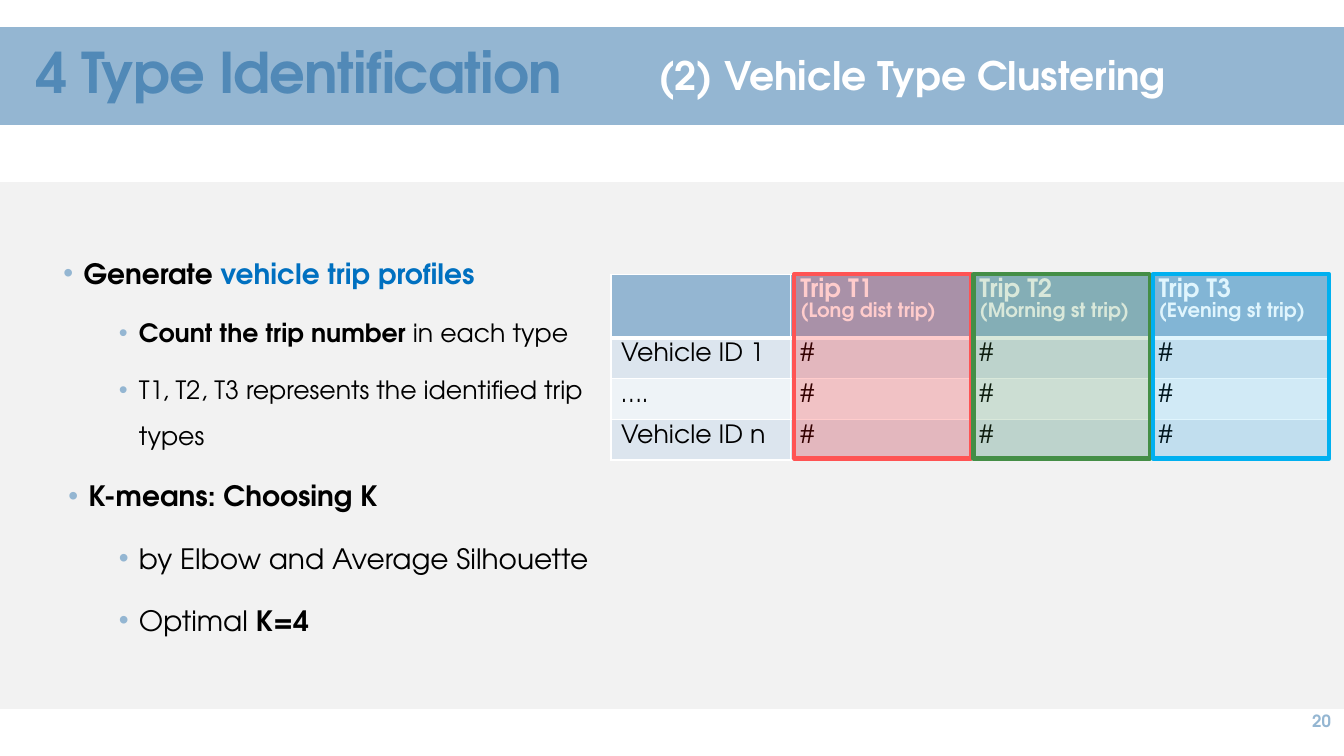
from lxml.etree import SubElement
from pptx import Presentation
from pptx.dml.color import RGBColor
from pptx.enum.shapes import MSO_SHAPE as Shape
from pptx.enum.text import MSO_ANCHOR as Anchor, PP_ALIGN as Align
from pptx.oxml import parse_xml
from pptx.oxml.ns import nsdecls, qn
from pptx.util import Inches, Pt

FONT = "TeX Gyre Adventor"
WHITE = RGBColor(0xFF, 0xFF, 0xFF)
BLACK = RGBColor(0, 0, 0)
SKY = RGBColor(0x94, 0xB6, 0xD2)
STEEL = RGBColor(0x51, 0x89, 0xB7)
BLUE = RGBColor(0x00, 0x70, 0xC0)
PANEL = RGBColor(0xF2, 0xF2, 0xF2)
BAND_DARK = RGBColor(0xDC, 0xE5, 0xEE)
BAND_LIGHT = RGBColor(0xEE, 0xF3, 0xF7)
RED = RGBColor(0xFF, 0x00, 0x00)
CORAL = RGBColor(0xFF, 0x53, 0x53)
GREEN = RGBColor(0x44, 0x8E, 0x46)
CYAN = RGBColor(0x00, 0xB0, 0xF0)

PROFILE_POINTS = [
    (0, 0.2, 12, [("Generate ", 20, True, BLACK), ("vehicle trip profiles", 20, True, BLUE)]),
    (1, 0.75, 2.5, [("Count the trip number ", 18, True, BLACK), ("in each type", 18, False, BLACK)]),
    (1, 0.75, 2.5, [("T1, T2, T3 represents the identified trip types", 18, False, BLACK)]),
    (0, 0.25, 2.5, [("K-means: Choosing K", 20, True, BLACK)]),
    (1, 0.75, 2.5, [("by Elbow and Average Silhouette", 20, False, BLACK)]),
    (1, 0.75, 2.5, [("Optimal ", 20, False, BLACK), ("K=4", 20, True, BLACK)]),
]
TRIP_TYPES = [
    ("Trip T1", "(Long dist trip)", RED, 20, CORAL),
    ("Trip T2", "(Morning st trip)", GREEN, 20, GREEN),
    ("Trip T3", "(Evening st trip)", CYAN, 12, CYAN),
]
VEHICLES = ["Vehicle ID 1", "….", "Vehicle ID n"]


def set_format(target, formats):
    for name, value in formats.items():
        setattr(target, name, value)


def add_span(para, text, size, bold, color):
    span = para.add_run()
    span.text = text
    set_format(span.font, {"name": FONT, "size": Pt(size), "bold": bold})
    span.font.color.rgb = color
    return span


def add_text_box(page, box, wrap=True, anchor=Anchor.TOP):
    frame = page.shapes.add_textbox(*map(Inches, box)).text_frame
    set_format(frame, {"word_wrap": wrap, "vertical_anchor": anchor})
    return frame


def add_rectangle(page, box, fill, line=None, width=0, alpha=None):
    rectangle = page.shapes.add_shape(Shape.RECTANGLE, *map(Inches, box))
    rectangle.shadow.inherit = False
    rectangle.fill.solid()
    rectangle.fill.fore_color.rgb = fill
    if line is None:
        rectangle.line.fill.background()
    else:
        rectangle.line.color.rgb = line
        rectangle.line.width = Pt(width)
    if alpha is not None:
        color = rectangle.fill._xPr.find(qn("a:solidFill"))[0]
        SubElement(color, qn("a:alpha"), val=str(alpha * 1000))


def add_title_band(page, box):
    left, top, width, height = box
    add_rectangle(page, box, SKY)
    title = add_text_box(page, (left + 0.26, top - 0.15, 7.42, 1.26), anchor=Anchor.MIDDLE)
    title.paragraphs[0].line_spacing = 0.9
    span = add_span(title.paragraphs[0], "4 Type Identification", 40, True, STEEL)
    span._r.get_or_add_rPr().set("spc", "-60")
    subtitle = add_text_box(page, (left + 6.43, top + 0.19, 5.46, 0.57), wrap=False)
    add_span(subtitle.paragraphs[0], "(2) Vehicle Type Clustering", 28, True, WHITE)


def add_bullet(para, indent):
    props = para._p.get_or_add_pPr()
    props.set("marL", str(Inches(indent)))
    props.set("indent", str(Inches(-0.2)))
    color = SubElement(props, qn("a:buClr"))
    SubElement(color, qn("a:srgbClr"), val=str(SKY))
    SubElement(props, qn("a:buFont"), typeface="Arial")
    SubElement(props, qn("a:buChar"), char="•")


def add_points(page, box):
    frame = add_text_box(page, box)
    for index, (level, indent, before, spans) in enumerate(PROFILE_POINTS):
        para = frame.add_paragraph() if index else frame.paragraphs[0]
        set_format(para, {"level": level, "line_spacing": 1.5,
                          "space_before": Pt(before), "space_after": Pt(6)})
        add_bullet(para, indent)
        for span in spans:
            add_span(para, *span)


def add_borders(cell, top, bottom):
    props = cell._tc.get_or_add_tcPr()
    sides = {"lnL": 1, "lnR": 1, "lnT": top, "lnB": bottom}
    for index, (side, width) in enumerate(sides.items()):
        props.insert(index, parse_xml(
            f'<a:{side} {nsdecls("a")} w="{Pt(width)}"><a:solidFill>'
            f'<a:srgbClr val="{WHITE}"/></a:solidFill></a:{side}>'))


def fill_cell(cell, lines, fill, color, bold, top, bottom):
    cell.fill.solid()
    cell.fill.fore_color.rgb = fill
    add_borders(cell, top, bottom)
    for index, (text, size) in enumerate(lines):
        para = cell.text_frame.add_paragraph() if index else cell.text_frame.paragraphs[0]
        add_span(para, text, size, bold, color)


def add_trip_table(page, box):
    left, top, width, height = box
    header_height = 0.62
    column_width = width / 4
    table = page.shapes.add_table(4, 4, *map(Inches, box)).table
    for column in table.columns:
        column.width = Inches(column_width)
    for index, row in enumerate(table.rows):
        row.height = Inches((height - header_height) / 3 if index else header_height)

    headers = [[]] + [[(name, 18), (detail, 14)] for name, detail, *_ in TRIP_TYPES]
    for column, lines in enumerate(headers):
        fill_cell(table.cell(0, column), lines, SKY, WHITE, True, 1, 3)
    for row, vehicle in enumerate(VEHICLES, 1):
        band = BAND_DARK if row % 2 else BAND_LIGHT
        for column, text in enumerate([vehicle, "#", "#", "#"]):
            fill_cell(table.cell(row, column), [(text, 18)], band, BLACK, False,
                      3 if row == 1 else 1, 1)

    for column, (_, _, fill, alpha, line) in enumerate(TRIP_TYPES, 1):
        frame_box = (left + column * column_width + 0.04, top, 1.75, height)
        add_rectangle(page, frame_box, fill, line, 3, alpha)


def add_page_number(page, box):
    frame = add_text_box(page, box, anchor=Anchor.MIDDLE)
    frame.paragraphs[0].alignment = Align.RIGHT
    add_span(frame.paragraphs[0], "20", 12, True, SKY)


def main():
    deck = Presentation()
    set_format(deck, {"slide_width": Inches(13.33), "slide_height": Inches(7.5)})
    page = deck.slides.add_slide(deck.slide_layouts[6])
    add_title_band(page, (0, 0.27, 13.33, 0.97))
    add_rectangle(page, (0, 1.81, 13.33, 5.22), PANEL, PANEL, 0.85)
    add_points(page, (0.53, 2.33, 5.68, 4.67))
    add_trip_table(page, (6.06, 2.72, 7.11, 1.83))
    add_page_number(page, (11.63, 6.95, 1.67, 0.4))
    deck.save("out.pptx")


if __name__ == "__main__":
    main()
